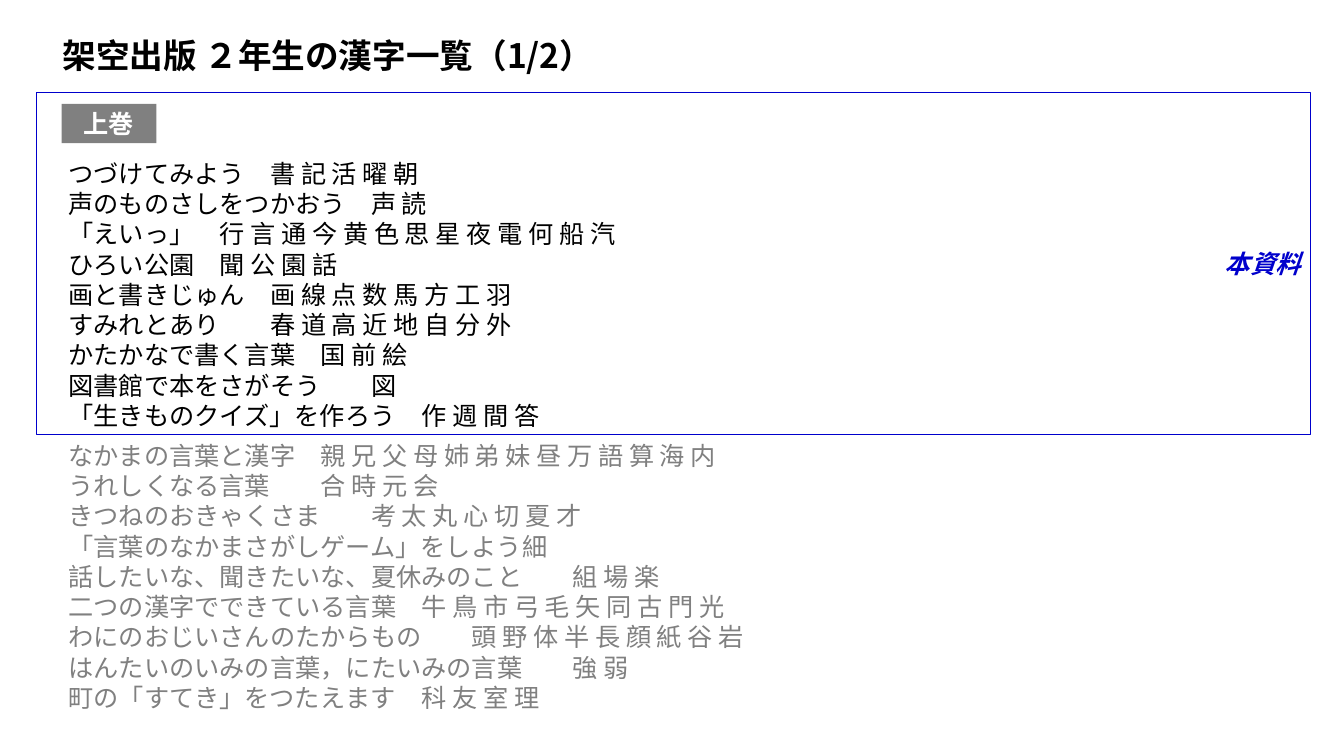
from lxml import etree
from pptx import Presentation
from pptx.dml.color import RGBColor
from pptx.enum.shapes import MSO_SHAPE
from pptx.enum.text import MSO_ANCHOR, MSO_AUTO_SIZE, PP_ALIGN
from pptx.oxml.ns import qn
from pptx.util import Inches, Pt

RECT = MSO_SHAPE.RECTANGLE
MIDDLE, TOP = MSO_ANCHOR.MIDDLE, MSO_ANCHOR.TOP
LEFT, CENTER, RIGHT = PP_ALIGN.LEFT, PP_ALIGN.CENTER, PP_ALIGN.RIGHT
NO_FIT = MSO_AUTO_SIZE.NONE

BLACK = RGBColor(0x00, 0x00, 0x00)
GRAY = RGBColor(0x80, 0x80, 0x80)
WHITE = RGBColor(0xFF, 0xFF, 0xFF)
BLUE = RGBColor(0x00, 0x00, 0xCC)

FONT = "Noto Sans CJK JP"
SLIDE_W, SLIDE_H = Inches(13.33), Inches(7.5)
KANJI_TAB = Inches(5)
LINE_PITCH, GROUP_GAP = Pt(21.6), Pt(7)

COVERED = [
    ("つづけてみよう", "書記活曜朝"),
    ("声のものさしをつかおう", "声読"),
    ("「えいっ」", "行言通今黄色思星夜電何船汽"),
    ("ひろい公園", "聞公園話"),
    ("画と書きじゅん", "画線点数馬方工羽"),
    ("すみれとあり", "春道高近地自分外"),
    ("かたかなで書く言葉", "国前絵"),
    ("図書館で本をさがそう", "図"),
    ("「生きものクイズ」を作ろう", "作週間答"),
]
REMAINING = [
    ("なかまの言葉と漢字", "親兄父母姉弟妹昼万語算海内"),
    ("うれしくなる言葉", "合時元会"),
    ("きつねのおきゃくさま", "考太丸心切夏才"),
    ("「言葉のなかまさがしゲーム」をしよう", "細"),
    ("話したいな、聞きたいな、夏休みのこと", "組場楽"),
    ("二つの漢字でできている言葉", "牛鳥市弓毛矢同古門光"),
    ("わにのおじいさんのたからもの", "頭野体半長顔紙谷岩"),
    ("はんたいのいみの言葉，にたいみの言葉", "強弱"),
    ("町の「すてき」をつたえます", "科友室理"),
]


def place(x, y, w, h):
    """Turn percentages of the slide into left, top, width, height."""
    return [int(share * side / 100) for share, side in
            ((x, SLIDE_W), (y, SLIDE_H), (w, SLIDE_W), (h, SLIDE_H))]


def move(sp, box):
    for name, value in zip(("left", "top", "width", "height"), place(*box)):
        setattr(sp, name, value)


def format_frame(tf, anchor):
    settings = {"word_wrap": True, "auto_size": NO_FIT, "vertical_anchor": anchor}
    for name, value in settings.items():
        setattr(tf, name, value)


def write(p, text, color, align=LEFT, **style):
    p.alignment = align
    r = p.add_run()
    r.text = text
    for name, value in {"name": FONT, "size": Pt(18), **style}.items():
        setattr(r.font, name, value)
    r.font.color.rgb = color
    etree.SubElement(r.font._element, qn("a:ea"), typeface=FONT)


def add_title(slide, text, box):
    sp = slide.shapes.title
    move(sp, box)
    format_frame(sp.text_frame, MIDDLE)
    write(sp.text_frame.paragraphs[0], text, BLACK, size=Pt(24), bold=True)


def set_tab(p):
    """Drop bullet and indent, and align the kanji at one tab stop."""
    pPr = p._p.get_or_add_pPr()
    pPr.set("marL", "0")
    pPr.set("indent", "0")
    etree.SubElement(pPr, qn("a:buNone"))
    tabs = etree.SubElement(pPr, qn("a:tabLst"))
    etree.SubElement(tabs, qn("a:tab"), pos=str(KANJI_TAB), algn="l")


def add_lessons(slide, groups, box):
    sp = slide.placeholders[1]
    move(sp, box)
    tf = sp.text_frame
    format_frame(tf, TOP)
    p = tf.paragraphs[0]
    for g, (lessons, color) in enumerate(groups):
        for i, (lesson, kanji) in enumerate(lessons):
            if g or i:
                p = tf.add_paragraph()
            p.line_spacing = LINE_PITCH
            p.space_before = GROUP_GAP if g and not i else Pt(0)
            p.space_after = Pt(0)
            set_tab(p)
            write(p, lesson + "\t" + " ".join(kanji), color)


def add_box(slide, text, box, color, align, fill=None, line=None, **style):
    sp = slide.shapes.add_shape(RECT, *place(*box))
    sp.shadow.inherit = False
    if fill is None:
        sp.fill.background()
    else:
        sp.fill.solid()
        sp.fill.fore_color.rgb = fill
    if line is None:
        sp.line.fill.background()
    else:
        sp.line.color.rgb = line
        sp.line.width = Pt(1)
    format_frame(sp.text_frame, MIDDLE)
    write(sp.text_frame.paragraphs[0], text, color, align, bold=True, **style)


def main():
    prs = Presentation()
    prs.slide_width, prs.slide_height = SLIDE_W, SLIDE_H
    slide = prs.slides.add_slide(prs.slide_layouts[1])

    # Heading and lesson list
    add_title(slide, "架空出版 ２年生の漢字一覧（1/2）", (3.9, 4, 72.7, 6.67))
    add_lessons(slide, [(COVERED, BLACK), (REMAINING, GRAY)],
                (4.35, 20.27, 71.7, 77.87))

    # Volume label and frame around the lessons covered here
    add_box(slide, "上巻", (4.58, 13.73, 7.05, 5.2), WHITE, CENTER, fill=GRAY)
    add_box(slide, "本資料", (2.7, 12.27, 94.8, 45.2), BLUE, RIGHT,
            line=BLUE, italic=True)

    prs.save("out.pptx")


if __name__ == "__main__":
    main()
